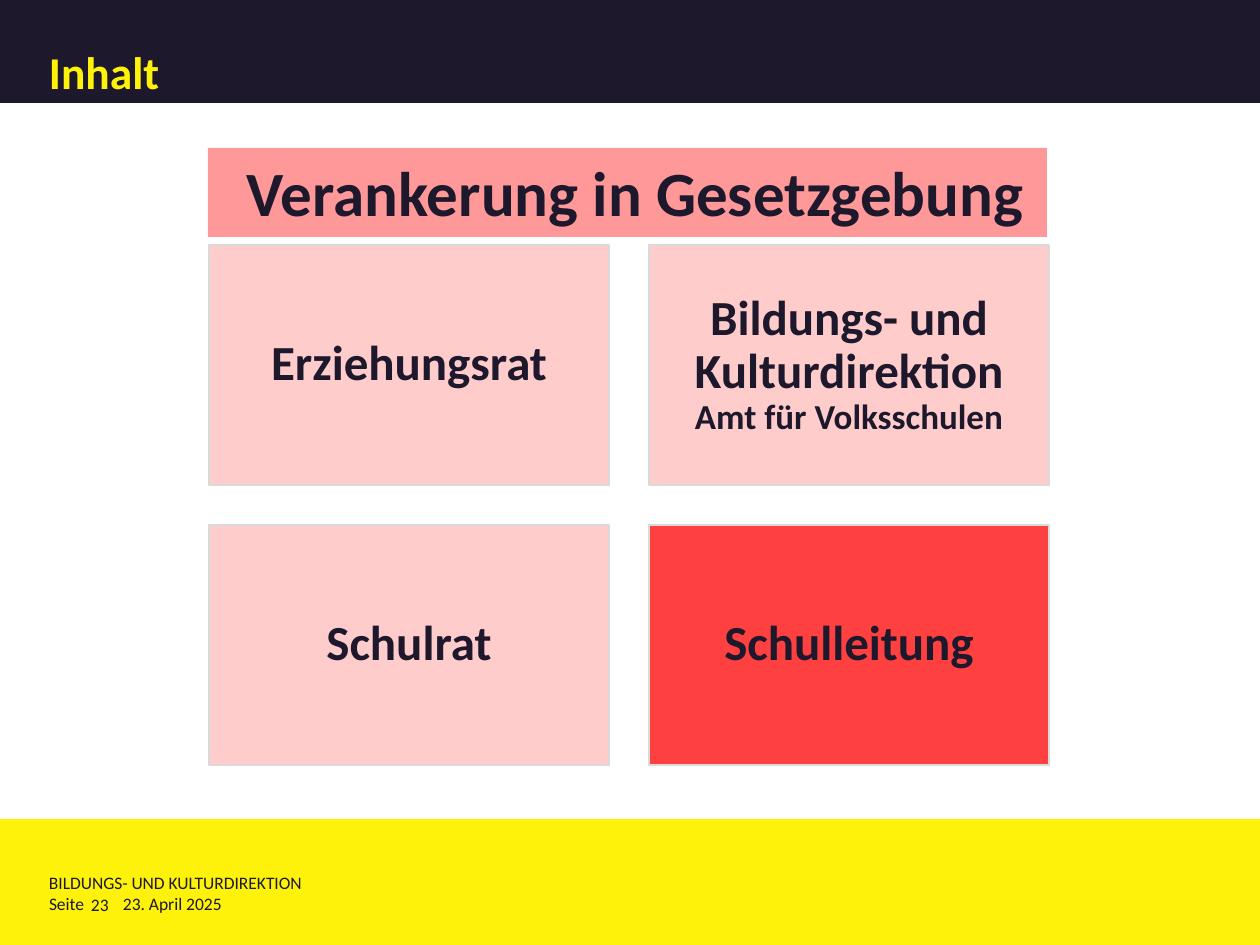
from dataclasses import dataclass

from pptx import Presentation
from pptx.dml.color import RGBColor
from pptx.enum.shapes import MSO_SHAPE
from pptx.enum.text import MSO_ANCHOR, PP_ALIGN
from pptx.util import Emu, Pt

RECTANGLE = MSO_SHAPE.RECTANGLE
TOP, MIDDLE, BOTTOM = MSO_ANCHOR.TOP, MSO_ANCHOR.MIDDLE, MSO_ANCHOR.BOTTOM
LEFT, CENTER = PP_ALIGN.LEFT, PP_ALIGN.CENTER
EMU_PER_PX = 914400 / 126


@dataclass(frozen=True)
class Theme:
    font: str = "Calibri"
    dark: str = "1D182C"
    yellow: str = "FEF20A"
    pale: str = "FFCCCC"
    pink: str = "FF9999"
    red: str = "FF4040"
    border: str = "D9D9D9"
    footer_size: int = 10
    note_size: int = 20
    title_size: int = 26
    card_size: int = 28
    banner_size: int = 36


THEME = Theme()


@dataclass(frozen=True)
class Area:
    left: int
    top: int
    width: int
    height: int

    def emu(self) -> list[Emu]:
        return [px(n) for n in (self.left, self.top, self.width, self.height)]


@dataclass(frozen=True)
class Card:
    column: int
    row: int
    name: str
    note: str = ""
    fill: str = THEME.pale


@dataclass(frozen=True)
class FooterText:
    text: str
    area: Area


CARD_AREA = Area(209, 245, 400, 240)
CARD_GAP = 40
CARDS = [
    Card(0, 0, "Erziehungsrat"),
    Card(1, 0, "Bildungs- und Kulturdirektion", note="Amt für Volksschulen"),
    Card(0, 1, "Schulrat"),
    Card(1, 1, "Schulleitung", fill=THEME.red),
]
FOOTER_TEXTS = [
    FooterText("BILDUNGS- UND KULTURDIREKTION", Area(49, 872, 942, 21)),
    FooterText("Seite", Area(49, 893, 44, 21)),
    FooterText("23. April 2025", Area(123, 893, 287, 21)),
    FooterText("23", Area(91, 894, 38, 21)),
]


def px(length: int) -> Emu:
    return Emu(round(length * EMU_PER_PX))


def add_panel(page, area: Area, fill: str, border: str = ""):
    panel = page.shapes.add_shape(RECTANGLE, *area.emu())
    panel.shadow.inherit = False
    panel.fill.solid()
    panel.fill.fore_color.rgb = RGBColor.from_string(fill)
    if border:
        panel.line.color.rgb = RGBColor.from_string(border)
        panel.line.width = Pt(1)
    else:
        panel.line.fill.background()
    return panel


def write(box, text: str, *, size: int, color: str = THEME.dark, bold: bool = True,
          align=LEFT, anchor=MIDDLE, insets: tuple[int, int, int, int] = (0, 0, 0, 0),
          spacing: float = 1.0, note: str = "") -> None:
    frame = box.text_frame
    frame.word_wrap = True
    frame.vertical_anchor = anchor
    (frame.margin_left, frame.margin_top,
     frame.margin_right, frame.margin_bottom) = map(px, insets)
    para = frame.paragraphs[0]
    para.alignment = align
    para.line_spacing = spacing
    spans = [(text, size)]
    if note:
        spans.append((note, THEME.note_size))
    for index, (words, points) in enumerate(spans):
        if index:
            para.add_line_break()
        span = para.add_run()
        span.text = words
        span.font.name = THEME.font
        span.font.size = Pt(points)
        span.font.bold = bold
        span.font.color.rgb = RGBColor.from_string(color)


def draw_card(page, card: Card) -> None:
    area = Area(CARD_AREA.left + card.column * (CARD_AREA.width + CARD_GAP),
                CARD_AREA.top + card.row * (CARD_AREA.height + CARD_GAP),
                CARD_AREA.width, CARD_AREA.height)
    panel = add_panel(page, area, card.fill, THEME.border)
    write(panel, card.name, note=card.note, size=THEME.card_size, align=CENTER,
          insets=(15, 15, 15, 15), spacing=0.9)


def draw_footer(page) -> None:
    add_panel(page, Area(0, 819, 1260, 126), THEME.yellow)
    for item in FOOTER_TEXTS:
        box = page.shapes.add_textbox(*item.area.emu())
        write(box, item.text, size=THEME.footer_size, bold=False, anchor=TOP)


def main() -> None:
    deck = Presentation()
    deck.slide_width, deck.slide_height = px(1260), px(945)
    page = deck.slides.add_slide(deck.slide_layouts[6])
    draw_footer(page)
    title = add_panel(page, Area(0, 0, 1260, 103), THEME.dark)
    write(title, "Inhalt", size=THEME.title_size, color=THEME.yellow, anchor=BOTTOM,
          insets=(49, 10, 10, 5), spacing=0.8)
    for card in CARDS:
        draw_card(page, card)
    banner = add_panel(page, Area(208, 148, 839, 89), THEME.pink)
    write(banner, "Verankerung in Gesetzgebung", size=THEME.banner_size, anchor=TOP,
          insets=(39, 6, 13, 6))
    deck.save("out.pptx")


if __name__ == "__main__":
    main()
